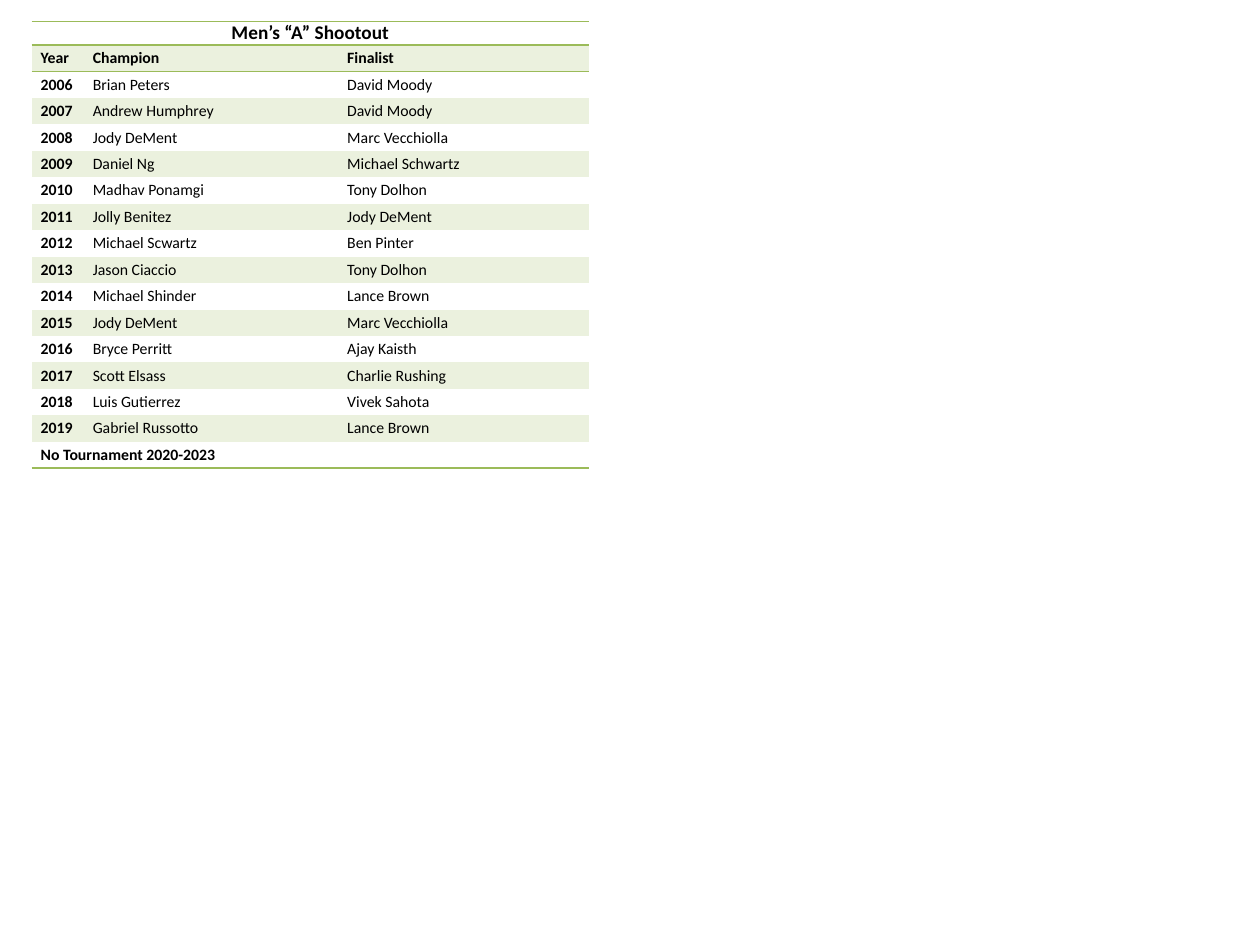
import pptx
import pptx.dml.color
import pptx.enum.text
import pptx.oxml
import pptx.oxml.ns
import pptx.util
from lxml import etree
from pptx.util import Cm

COLORS = {"text": "000000", "rule": "9BBB59", "band": "EBF1DE"}
FONT = "Calibri"
TITLE_SIZE, BODY_SIZE = 11, 9
NO_STYLE_NO_GRID = "{2D5ABB26-0587-4C30-8999-92F81FD0307C}"

TITLE = "Men’s “A” Shootout"
HEADINGS = ("Year", "Champion", "Finalist")
RESULTS = [
    ("2006", "Brian Peters", "David Moody"),
    ("2007", "Andrew Humphrey", "David Moody"),
    ("2008", "Jody DeMent", "Marc Vecchiolla"),
    ("2009", "Daniel Ng", "Michael Schwartz"),
    ("2010", "Madhav Ponamgi", "Tony Dolhon"),
    ("2011", "Jolly Benitez", "Jody DeMent"),
    ("2012", "Michael Scwartz", "Ben Pinter"),
    ("2013", "Jason Ciaccio", "Tony Dolhon"),
    ("2014", "Michael Shinder", "Lance Brown"),
    ("2015", "Jody DeMent", "Marc Vecchiolla"),
    ("2016", "Bryce Perritt", "Ajay Kaisth"),
    ("2017", "Scott Elsass", "Charlie Rushing"),
    ("2018", "Luis Gutierrez", "Vivek Sahota"),
    ("2019", "Gabriel Russotto", "Lance Brown"),
]
CLOSING_NOTE = "No Tournament 2020-2023"

COLUMN_WIDTHS = (1.05, 5.13, 5.05)
TITLE_HEIGHT = 0.48
BODY_HEIGHT = 8.53


def color(name):
    return pptx.dml.color.RGBColor.from_string(COLORS[name])


def add_rule(cell, side):
    """Draw a green line on one side of a cell: T (top) or B (bottom)."""
    properties = cell._tc.get_or_add_tcPr()
    properties.append(pptx.oxml.parse_xml(
        f'<a:ln{side} {pptx.oxml.ns.nsdecls("a")} w="{pptx.util.Pt(1)}">'
        f'<a:solidFill><a:srgbClr val="{COLORS["rule"]}"/></a:solidFill>'
        f'</a:ln{side}>'))


def fill_cell(cell, text, size=BODY_SIZE, bold=False, band=False, rules=""):
    cell.margin_left = cell.margin_right = Cm(0.18)
    cell.margin_top = cell.margin_bottom = 0
    cell.vertical_anchor = pptx.enum.text.MSO_ANCHOR.MIDDLE
    for side in rules:
        add_rule(cell, side)
    if band:
        cell.fill.solid()
        cell.fill.fore_color.rgb = color("band")
    else:
        cell.fill.background()

    paragraph = cell.text_frame.paragraphs[0]
    if text:
        run = paragraph.add_run()
        run.text = text
        run.font.name = FONT
        run.font.size = pptx.util.Pt(size)
        run.font.bold = bold
        run.font.color.rgb = color("text")
    else:
        # An empty cell keeps the small size, so its row does not grow
        etree.SubElement(paragraph._p, pptx.oxml.ns.qn("a:endParaRPr"),
                         sz=str(size * 100))


def add_honor_roll(slide):
    rows = [(TITLE, "", ""), HEADINGS, *RESULTS, (CLOSING_NOTE, "", "")]
    last = len(rows) - 1
    honor_roll = slide.shapes.add_table(
        len(rows), len(HEADINGS), Cm(0.64), Cm(0.43),
        Cm(sum(COLUMN_WIDTHS)), Cm(TITLE_HEIGHT + BODY_HEIGHT)).table
    honor_roll.first_row = honor_roll.horz_banding = False
    style = honor_roll._tbl.tblPr.find(pptx.oxml.ns.qn("a:tableStyleId"))
    style.text = NO_STYLE_NO_GRID

    for column, width in zip(honor_roll.columns, COLUMN_WIDTHS):
        column.width = Cm(width)
    for index, row in enumerate(honor_roll.rows):
        row.height = Cm(BODY_HEIGHT / last if index else TITLE_HEIGHT)

    # Title and closing note span several columns
    honor_roll.cell(0, 0).merge(honor_roll.cell(0, 2))
    honor_roll.cell(last, 0).merge(honor_roll.cell(last, 1))

    # Odd rows are banded; rules frame the title and close the table
    rules = {0: "TB", 1: "T", last: "B"}
    for r, texts in enumerate(rows):
        for c, text in enumerate(texts):
            fill_cell(honor_roll.cell(r, c), text,
                      size=BODY_SIZE if r else TITLE_SIZE,
                      bold=r < 2 or c == 0,
                      band=r % 2 == 1,
                      rules=rules.get(r, ""))

    title = honor_roll.cell(0, 0)
    title.vertical_anchor = pptx.enum.text.MSO_ANCHOR.TOP
    title.text_frame.paragraphs[0].alignment = pptx.enum.text.PP_ALIGN.CENTER


def main():
    presentation = pptx.Presentation()
    presentation.slide_width = Cm(25.4)
    presentation.slide_height = Cm(19.05)
    slide = presentation.slides.add_slide(presentation.slide_layouts[6])
    add_honor_roll(slide)
    presentation.save("out.pptx")


if __name__ == "__main__":
    main()
